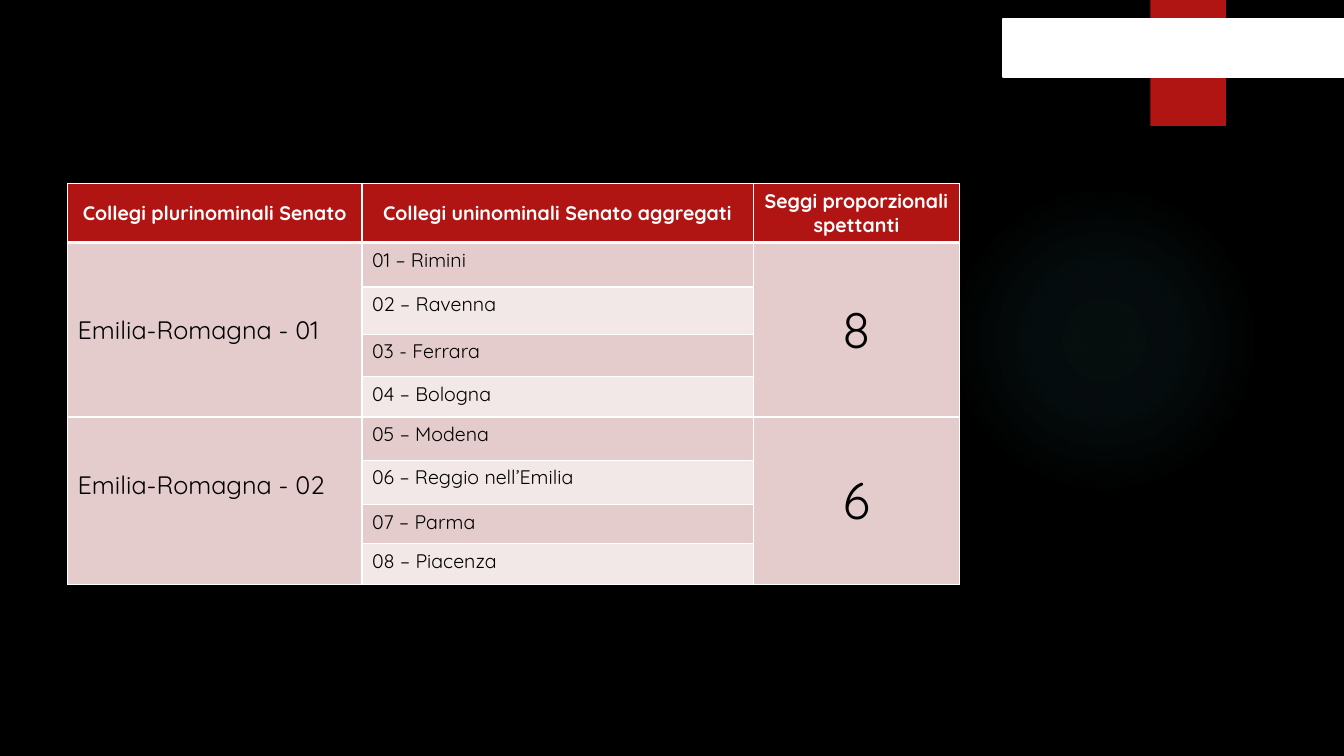
from lxml import etree
from pptx import Presentation
from pptx.dml.color import RGBColor
from pptx.enum.shapes import MSO_SHAPE as Shape
from pptx.enum.text import MSO_ANCHOR as Anchor, PP_ALIGN as Align
from pptx.oxml import parse_xml
from pptx.oxml.ns import nsdecls, qn
from pptx.util import Inches, Pt

BLACK = RGBColor(0x00, 0x00, 0x00)
WHITE = RGBColor(0xFF, 0xFF, 0xFF)
RED = RGBColor(0xB0, 0x15, 0x13)
TEAL = RGBColor(0x50, 0xB9, 0xC1)
ROSE = RGBColor(0xE4, 0xCC, 0xCC)
PALE_ROSE = RGBColor(0xF2, 0xE8, 0xE7)

HEADERS = [
    "Collegi plurinominali Senato",
    "Collegi uninominali Senato aggregati",
    "Seggi proporzionali spettanti",
]
# Multi-member district, its single-member districts, its seats, bottom margin of its name
DISTRICTS = [
    ("Emilia-Romagna - 01",
     ["01 – Rimini", "02 – Ravenna", "03 - Ferrara", "04 – Bologna"], "8", 0.05),
    ("Emilia-Romagna - 02",
     ["05 – Modena", "06 – Reggio nell’Emilia", "07 – Parma", "08 – Piacenza"], "6", 0.36),
]
COLUMN_WIDTHS = [2.92, 3.88, 2.05]
ROW_HEIGHTS = [0.57, 0.44, 0.47, 0.42, 0.4, 0.43, 0.44, 0.39, 0.4]


class SlideBuilder:
    font_name = "Quicksand"

    def __init__(self, slide):
        self.slide = slide
        slide.background.fill.solid()
        slide.background.fill.fore_color.rgb = BLACK

    def shape(self, kind, left, top, width, height, color, line_width=None):
        shape = self.slide.shapes.add_shape(
            kind, Inches(left), Inches(top), Inches(width), Inches(height))
        shape.shadow.inherit = False
        shape.fill.solid()
        shape.fill.fore_color.rgb = color
        if line_width:
            shape.line.color.rgb = color
            shape.line.width = Pt(line_width)
        else:
            shape.line.fill.background()
        return shape

    def glow(self, left, top, size, color, stops):
        """Add a circle that fades outwards; stops are (position, opacity) percentages."""
        circle = self.shape(Shape.OVAL, left, top, size, size, color)
        stop_xml = "".join(
            f'<a:gs pos="{position * 1000}"><a:srgbClr val="{color}">'
            f'<a:alpha val="{opacity * 1000}"/></a:srgbClr></a:gs>'
            for position, opacity in stops)
        gradient = parse_xml(
            f'<a:gradFill {nsdecls("a")}><a:gsLst>{stop_xml}</a:gsLst><a:path path="circle">'
            '<a:fillToRect l="50000" t="50000" r="50000" b="50000"/></a:path></a:gradFill>')
        properties = circle._element.spPr
        properties.replace(properties.find(qn("a:solidFill")), gradient)

    def table(self, left, top, column_widths, row_heights):
        frame = self.slide.shapes.add_table(
            len(row_heights), len(column_widths), Inches(left), Inches(top),
            Inches(sum(column_widths)), Inches(sum(row_heights)))
        table = frame.table
        for column, width in zip(table.columns, column_widths):
            column.width = Inches(width)
        for row, height in zip(table.rows, row_heights):
            row.height = Inches(height)
        return table

    def borders(self, cell, top=1, bottom=1):
        properties = cell._tc.get_or_add_tcPr()
        widths = {"lnL": 1, "lnR": 1, "lnT": top, "lnB": bottom}
        for index, (side, width) in enumerate(widths.items()):
            line = etree.Element(qn(f"a:{side}"), w=str(Pt(width)))
            fill = etree.SubElement(line, qn("a:solidFill"))
            etree.SubElement(fill, qn("a:srgbClr"), val=str(WHITE))
            properties.insert(index, line)

    def cell(self, cell, text, size, fill, color=BLACK, bold=False,
             align=Align.LEFT, anchor=Anchor.MIDDLE):
        cell.fill.solid()
        cell.fill.fore_color.rgb = fill
        cell.vertical_anchor = anchor
        cell.text_frame.text = text
        paragraph = cell.text_frame.paragraphs[0]
        paragraph.alignment = align
        font = paragraph.runs[0].font
        font.name = self.font_name
        font.size = Pt(size)
        font.bold = bold
        font.color.rgb = color


def fill_seats_table(builder, table):
    for column, header in enumerate(HEADERS):
        builder.cell(table.cell(0, column), header, 14, RED, WHITE, True, Align.CENTER)

    first = 1
    for name, members, seats, bottom_margin in DISTRICTS:
        last = first + len(members) - 1
        for column in (0, 2):
            table.cell(first, column).merge(table.cell(last, column))
        name_cell = table.cell(first, 0)
        builder.cell(name_cell, name, 18, ROSE)
        name_cell.margin_bottom = Inches(bottom_margin)
        builder.cell(table.cell(first, 2), seats, 36, ROSE, align=Align.CENTER)
        for row, member in enumerate(members, first):
            fill = ROSE if row % 2 else PALE_ROSE
            builder.cell(table.cell(row, 1), member, 14, fill, anchor=Anchor.TOP)
        first = last + 1

    for row in range(len(ROW_HEIGHTS)):
        for column in range(len(COLUMN_WIDTHS)):
            builder.borders(table.cell(row, column),
                            top=3 if row == 1 else 1, bottom=3 if row == 0 else 1)


def main():
    presentation = Presentation()
    presentation.slide_width = Inches(13.33)
    presentation.slide_height = Inches(7.5)
    builder = SlideBuilder(presentation.slides.add_slide(presentation.slide_layouts[6]))

    builder.glow(9.41, 1.83, 3.08, TEAL, [(0, 7), (36, 6), (69, 0)])
    builder.shape(Shape.RECTANGLE, 11.41, 0, 0.75, 1.25, RED)
    builder.shape(Shape.RECTANGLE, 9.95, 0.19, 3.38, 0.57, WHITE, line_width=1.5)
    fill_seats_table(builder, builder.table(0.67, 1.82, COLUMN_WIDTHS, ROW_HEIGHTS))

    presentation.save("out.pptx")


if __name__ == "__main__":
    main()
